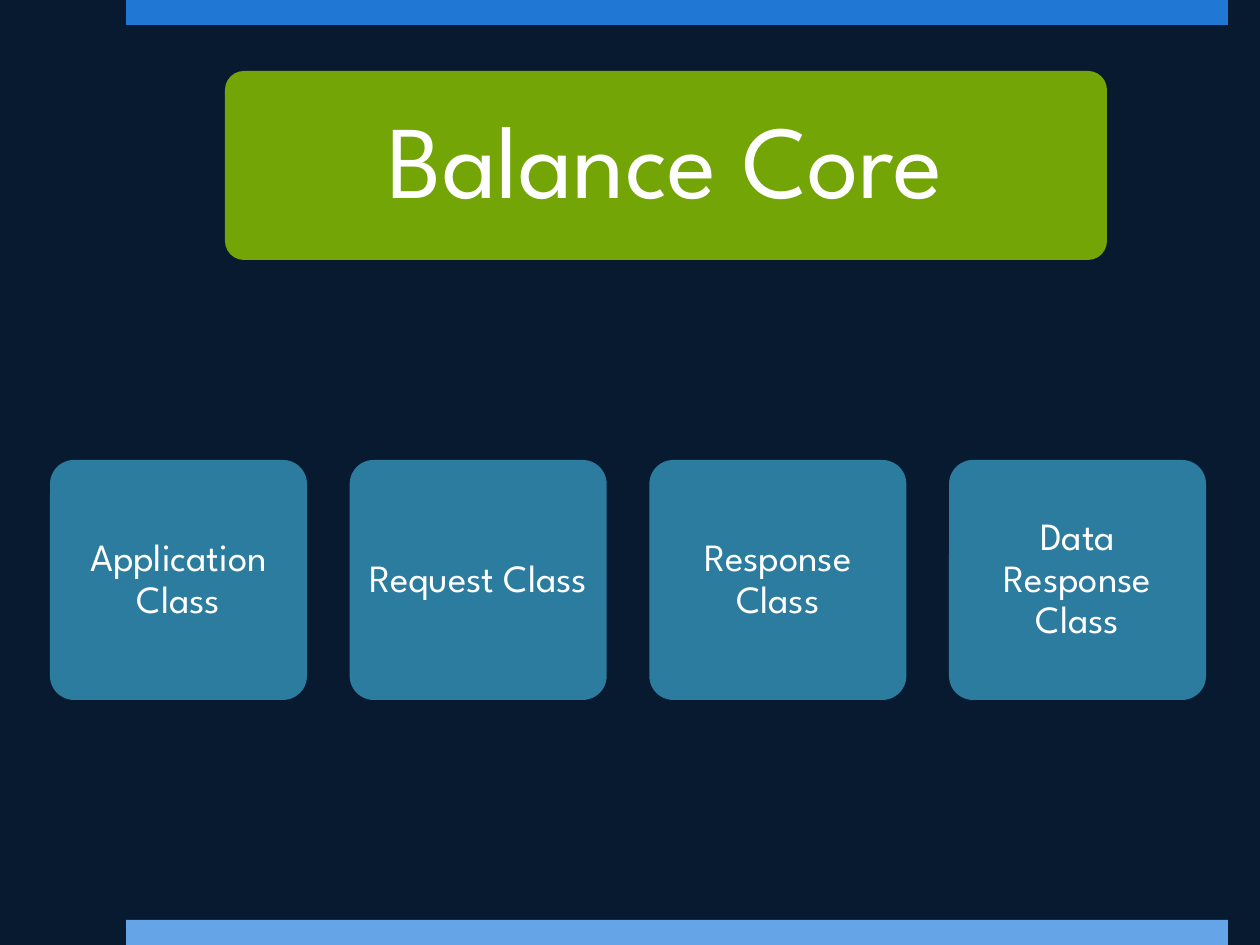
from pptx import Presentation
from pptx.dml.color import RGBColor
from pptx.enum.shapes import MSO_SHAPE as Shape
from pptx.enum.text import MSO_ANCHOR as Anchor, MSO_AUTO_SIZE as AutoSize, PP_ALIGN as Align
from pptx.util import Inches, Pt

SCALE = Inches(1) / 126
FONT = "League Spartan"
NAVY, WHITE = "071A2F", "FFFFFF"
GREEN, TEAL = "72A505", "2C7C9F"
BARS = [(0, "2077D4"), (920, "66A4E8")]
CLASSES = ["Application Class", "Request Class", "Response Class", "Data Response Class"]


def px(value):
    return round(value * SCALE)


def paint(fill, color):
    fill.solid()
    fill.fore_color.rgb = RGBColor.from_string(color)


def set_all(target, values):
    for name, value in values.items():
        setattr(target, name, value)


def add_block(slide, kind, box, color):
    shape = slide.shapes.add_shape(kind, *map(px, box))
    shape.shadow.inherit = False
    paint(shape.fill, color)
    shape.line.fill.background()
    return shape


def add_card(slide, box, color):
    card = add_block(slide, Shape.ROUNDED_RECTANGLE, box, color)
    card.adjustments[0] = 0.1
    return card


def write(shape, text, size, inset):
    """Put one centred white paragraph in the shape."""
    frame = shape.text_frame
    frame.text = text
    set_all(frame, {"word_wrap": True, "auto_size": AutoSize.NONE,
                    "vertical_anchor": Anchor.MIDDLE})
    set_all(frame, {f"margin_{side}": px(inset) for side in ("left", "top", "right", "bottom")})
    paragraph = frame.paragraphs[0]
    set_all(paragraph, {"alignment": Align.CENTER, "line_spacing": 0.9})
    font = paragraph.runs[0].font
    set_all(font, {"name": FONT, "size": Pt(size)})
    font.color.rgb = RGBColor.from_string(WHITE)


def add_title(slide, text):
    """Lay the title placeholder over its green card."""
    add_card(slide, (225, 71, 882, 189), GREEN)
    title = slide.shapes.title
    box = map(px, (230, 76, 871, 178))
    set_all(title, dict(zip(("left", "top", "width", "height"), box)))
    write(title, text, 59, 31)
    slide.shapes._spTree.append(title._element)


def main():
    presentation = Presentation()
    set_all(presentation, {"slide_width": px(1260), "slide_height": px(945)})
    slide = presentation.slides.add_slide(presentation.slide_layouts[5])
    paint(slide.background.fill, NAVY)

    for top, color in BARS:
        add_block(slide, Shape.RECTANGLE, (126, top, 1102, 25), color)

    first, last = 50, 949
    pitch = (last - first) / (len(CLASSES) - 1)
    for index, name in enumerate(CLASSES):
        card = add_card(slide, (first + index * pitch, 460, 257, 240), TEAL)
        write(card, name, 22, 11)

    add_title(slide, "Balance Core")
    presentation.save("out.pptx")


if __name__ == "__main__":
    main()
